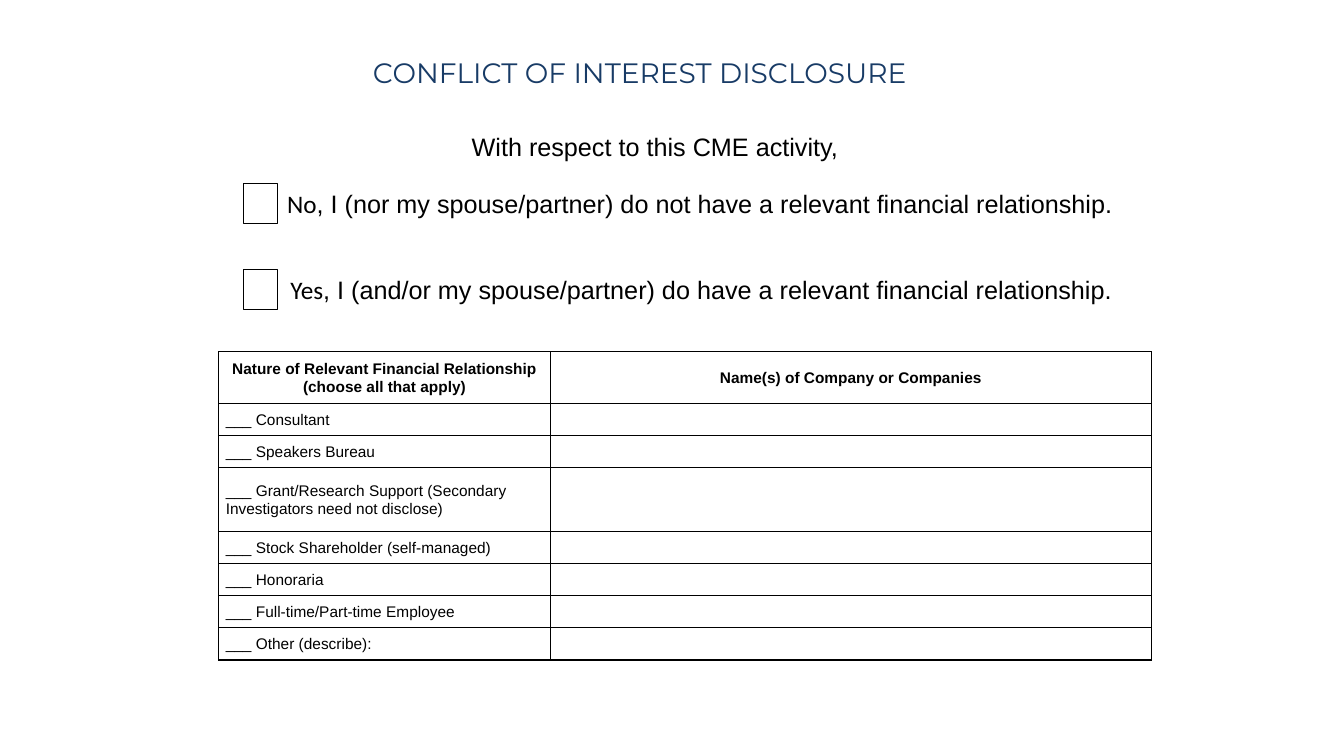
"""Build the conflict of interest disclosure slide."""
from lxml import etree
from pptx import Presentation
from pptx.dml.color import RGBColor
from pptx.enum.shapes import MSO_SHAPE
from pptx.enum.text import MSO_ANCHOR, PP_ALIGN
from pptx.oxml.ns import qn
from pptx.util import Inches, Pt

RECT = MSO_SHAPE.RECTANGLE
TOP, MIDDLE = MSO_ANCHOR.TOP, MSO_ANCHOR.MIDDLE
LEFT, CENTER = PP_ALIGN.LEFT, PP_ALIGN.CENTER
COLORS = {"title": "183B66", "black": "000000"}


def add_run(p, text, size, bold=False, color="black", font="Arial"):
    p.text = p.text if not p.runs else p.text
    r = p.add_run()
    r.text = text
    r.font.name, r.font.size, r.font.bold = font, Pt(size), bold
    r.font.color.rgb = RGBColor.from_string(COLORS[color])


def add_borders(cell):
    tc_pr = cell._tc.get_or_add_tcPr()
    for i, side in enumerate(("lnL", "lnR", "lnT", "lnB")):
        ln = etree.Element(qn(f"a:{side}"), w=str(Pt(1)))
        fill = etree.SubElement(ln, qn("a:solidFill"))
        etree.SubElement(fill, qn("a:srgbClr"), val=COLORS["black"])
        tc_pr.insert(i, ln)


prs = Presentation()
prs.slide_width, prs.slide_height = Inches(13.33), Inches(7.5)
s = prs.slides.add_slide(prs.slide_layouts[5])

title = s.shapes.title
title.left, title.top = Inches(2.67), Inches(0.55)
title.width, title.height = Inches(7.5), Inches(0.58)
tf = title.text_frame
tf.vertical_anchor = TOP
tf.margin_top, tf.margin_right = 0, Inches(0.25)
p = tf.paragraphs[0]
p.alignment = CENTER
add_run(p, "CONFLICT OF INTEREST DISCLOSURE", 20, color="title", font="Montserrat")

statements = [
    (4.58, 1.25, 4.17, 0.1, "", "With respect to this CME activity,"),
    (2.75, 1.82, 8.5, 0.1, "No",
     ", I (nor my spouse/partner) do not have a relevant financial relationship."),
    (2.67, 2.67, 9.67, 0.21, "Yes",
     ", I (and/or my spouse/partner) do have a relevant financial relationship."),
]
for x, y, w, inset, answer, text in statements:
    tf = s.shapes.add_textbox(Inches(x), Inches(y), Inches(w), Inches(0.4)).text_frame
    tf.word_wrap = True
    tf.margin_left = Inches(inset)
    p = tf.paragraphs[0]
    if answer:
        add_run(p, answer, 18, bold=True)
        box = s.shapes.add_shape(RECT, Inches(2.42), Inches(y), Inches(0.33), Inches(0.4))
        box.shadow.inherit = False
        box.fill.background()
        box.line.color.rgb = RGBColor.from_string(COLORS["black"])
        box.line.width = Pt(0.75)
    add_run(p, text, 18)

rows = [
    ("Nature of Relevant Financial Relationship\v(choose all that apply)",
     "Name(s) of Company or Companies"),
    ("___ Consultant", ""),
    ("___ Speakers Bureau", ""),
    ("___ Grant/Research Support (Secondary Investigators need not disclose)", ""),
    ("___ Stock Shareholder (self-managed)", ""),
    ("___ Honoraria", ""),
    ("___ Full-time/Part-time Employee", ""),
    ("___ Other (describe):", ""),
]
heights = {0: 0.51, 3: 0.63}
table = s.shapes.add_table(len(rows), 2, Inches(2.17), Inches(3.49),
                           Inches(9.25), Inches(3.08)).table
table.first_row = table.horz_banding = False
table.columns[0].width, table.columns[1].width = Inches(3.29), Inches(5.96)
for i, row in enumerate(rows):
    table.rows[i].height = Inches(heights.get(i, 0.32))
    for j, text in enumerate(row):
        cell = table.cell(i, j)
        cell.fill.background()
        add_borders(cell)
        cell.vertical_anchor = MIDDLE
        cell.margin_left = cell.margin_right = Inches(0.07)
        cell.margin_top = cell.margin_bottom = 0
        if not text:
            continue
        p = cell.text_frame.paragraphs[0]
        p.text = text
        p.alignment = CENTER if i == 0 else LEFT
        p.line_spacing = Pt(13)
        for r in p.runs:
            r.font.name, r.font.size, r.font.bold = "Arial", Pt(11), i == 0
            r.font.color.rgb = RGBColor.from_string(COLORS["black"])

prs.save("out.pptx")
